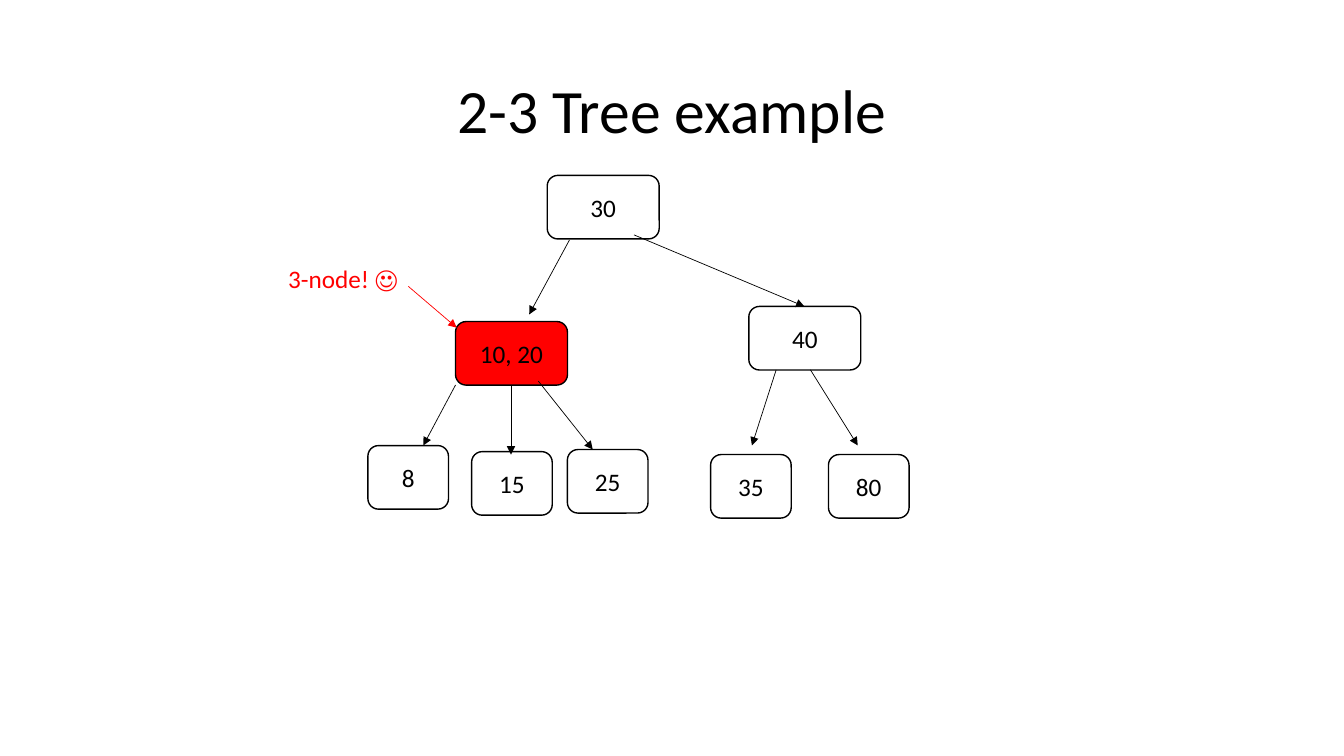
from pptx import Presentation
from pptx.dml.color import RGBColor
from pptx.enum import shapes as sh, text as tx
from pptx.oxml import ns, xmlchemy as xc
from pptx.util import Pt

INK = {"black": "000000", "red": "FF0000"}
FONT = "Calibri"
TALL = 45.4
WIDE, SLIM = 80, 57.6
NODES = [
    ("30", 192.2, 0, WIDE, None),
    ("40", 336.2, 93.6, WIDE, None),
    ("10, 20", 126.7, 104.4, WIDE, "red"),
    ("8", 64.1, 193, SLIM, None),
    ("15", 138.2, 197.3, SLIM, None),
    ("25", 206.6, 195.8, SLIM, None),
    ("35", 308.9, 199.4, SLIM, None),
    ("80", 393.1, 199.4, SLIM, None),
]
LINKS = [
    (208.1, 46.1, 179.3, 99.3),
    (254.2, 42.5, 375.9, 93.6),
    (355.7, 138.9, 338.4, 192.9),
    (380.2, 138.9, 414, 192.9),
    (126.7, 149.7, 103.7, 192.9),
    (166.3, 149.7, 166.3, 199.4),
    (185.8, 146.9, 224.7, 195.8),
]


def tint(name):
    """Return the named colour."""
    return RGBColor.from_string(INK[name])


def put(shape, words, size, ink, align, anchor):
    """Write one line of styled text into a shape."""
    frame = shape.text_frame
    frame.text = words
    frame.word_wrap = True
    frame.vertical_anchor = anchor
    para = frame.paragraphs[0]
    para.alignment = align
    font = para.runs[0].font
    font.name, font.size = FONT, Pt(size)
    font.color.rgb = tint(ink)


def node(slide, words, x, y, w, fill):
    """Draw one tree node."""
    box = slide.shapes.add_shape(
        sh.MSO_SHAPE.ROUNDED_RECTANGLE, Pt(x), Pt(y), Pt(w), Pt(TALL))
    box.shadow.inherit = False
    if fill:
        box.fill.solid()
        box.fill.fore_color.rgb = tint(fill)
    else:
        box.fill.background()
    box.line.color.rgb = tint("black")
    box.line.width = Pt(1)
    put(box, words, 18, "black", tx.PP_ALIGN.CENTER, tx.MSO_ANCHOR.MIDDLE)


def arrow(slide, x1, y1, x2, y2, ink):
    """Draw a thin arrow between two points."""
    line = slide.shapes.add_connector(
        sh.MSO_CONNECTOR.STRAIGHT, Pt(x1), Pt(y1), Pt(x2), Pt(y2))
    line.line.color.rgb = tint(ink)
    line.line.width = Pt(0.5)
    head = xc.OxmlElement("a:tailEnd")
    head.set("type", "triangle")
    line.line._get_or_add_ln().append(head)
    props = line._element.find(ns.qn("p:spPr"))
    props.append(xc.OxmlElement("a:effectLst"))


def title(slide, x, y, w, h):
    """Place the slide title."""
    head = slide.shapes.title
    head.left, head.top, head.width, head.height = Pt(x), Pt(y), Pt(w), Pt(h)
    put(head, "2-3 Tree example", 44, "black",
        tx.PP_ALIGN.CENTER, tx.MSO_ANCHOR.MIDDLE)
    head.text_frame.auto_size = tx.MSO_AUTO_SIZE.NONE
    head.text_frame.paragraphs[0].line_spacing = 0.9


def tree(slide, x, y):
    """Draw the nodes and the arrows that join them."""
    for words, left, top, wide, fill in NODES:
        node(slide, words, x + left, y + top, wide, fill)
    for x1, y1, x2, y2 in LINKS:
        arrow(slide, x + x1, y + y1, x + x2, y + y2, "black")


def note(slide, x, y, w, h):
    """Label the 3-node and point to it."""
    box = slide.shapes.add_textbox(Pt(x), Pt(y), Pt(w), Pt(h))
    put(box, "3-node! ☺", 18, "red", tx.PP_ALIGN.LEFT, tx.MSO_ANCHOR.TOP)
    arrow(slide, x + 92.9, y + 20.2, x + 127.5, y + 49.7, "red")


def main():
    """Build and save the slide."""
    deck = Presentation()
    deck.slide_width, deck.slide_height = Pt(960), Pt(540)
    slide = deck.slides.add_slide(deck.slide_layouts[5])
    title(slide, 66, 28.8, 828, 104.4)
    tree(slide, 198.7, 125.3)
    note(slide, 198.7, 184.3, 102.2, 28.8)
    deck.save("out.pptx")


if __name__ == "__main__":
    main()
